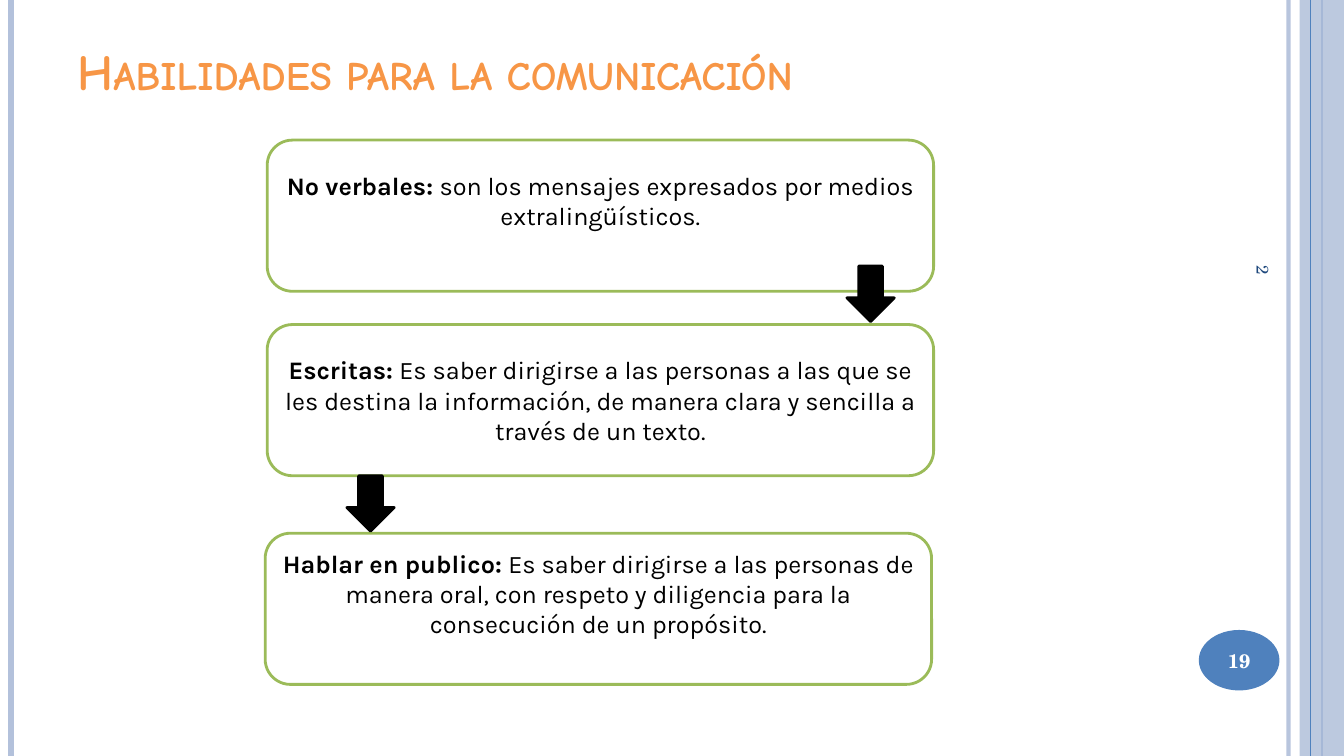
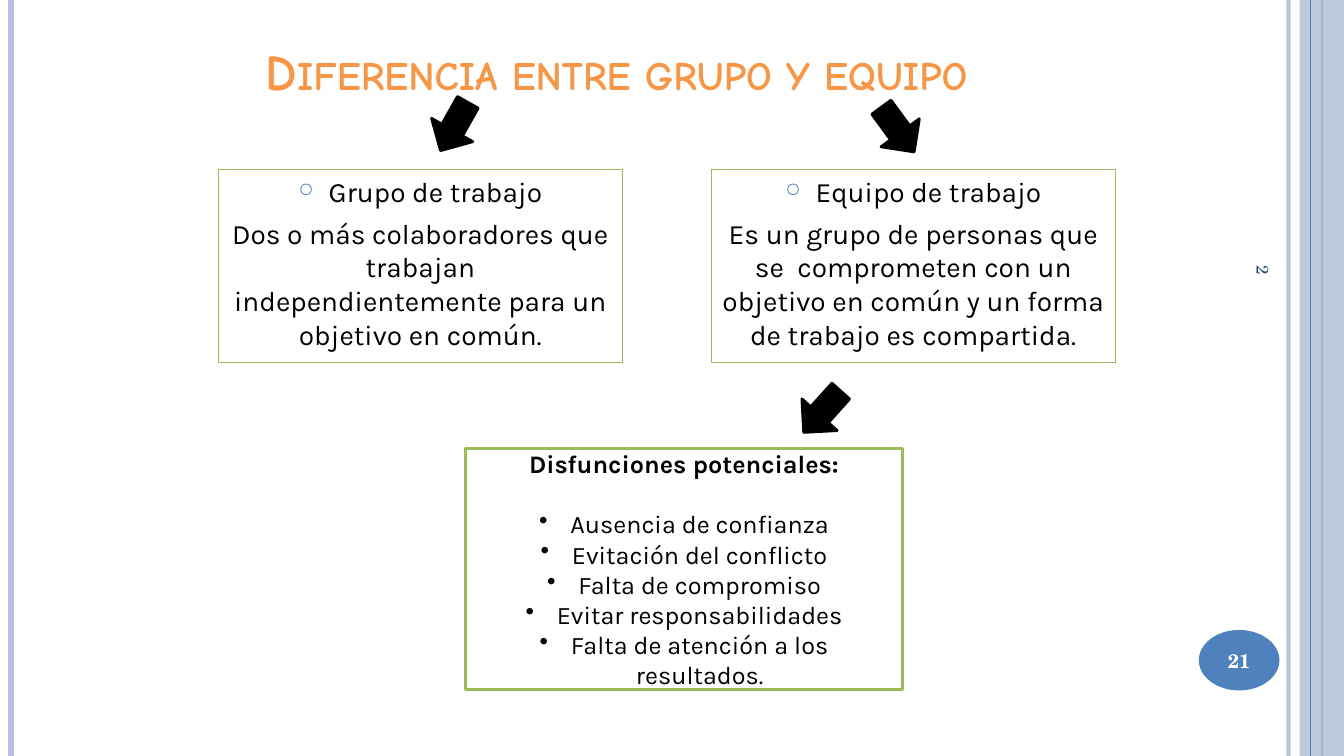
"""Builds two training slides on communication skills and on groups versus teams."""
from dataclasses import dataclass
from typing import Optional

from lxml.etree import SubElement
from pptx import Presentation
from pptx.dml.color import RGBColor
from pptx.enum.shapes import MSO_CONNECTOR, MSO_SHAPE
from pptx.enum.text import MSO_ANCHOR, PP_ALIGN
from pptx.oxml.ns import qn
from pptx.presentation import Presentation as Deck
from pptx.shapes.autoshape import Shape
from pptx.shapes.base import BaseShape
from pptx.slide import Slide
from pptx.text.text import TextFrame
from pptx.util import Inches, Pt

BLACK = RGBColor(0x00, 0x00, 0x00)
WHITE = RGBColor(0xFF, 0xFF, 0xFF)
BLUE = RGBColor(0x4F, 0x81, 0xBD)
PALE_BLUE = RGBColor(0xB3, 0xC1, 0xDB)
NAVY = RGBColor(0x1F, 0x49, 0x7D)
GREEN = RGBColor(0x9B, 0xBB, 0x59)
ORANGE = RGBColor(0xF7, 0x96, 0x46)

TITLE_FONT = "Comic Neue"
BODY_FONT = "Karla"
NUMBER_FONT = "TeX Gyre Schola"

SLIDE_WIDTH = 13.33
SLIDE_HEIGHT = 7.5
ARROW_WIDTH = 0.47
ARROW_HEIGHT = 0.55
TEXT_LINE = 0.3


@dataclass(frozen=True)
class Rule:
    x: float
    color: RGBColor
    width: float
    opacity: int = 100


@dataclass(frozen=True)
class Bullet:
    char: str
    indent: float
    color: Optional[RGBColor] = None
    percent: int = 100


@dataclass(frozen=True)
class Para:
    text: str
    lead: str = ""
    bullet: Optional[Bullet] = None
    before: float = 0
    after: float = 0


@dataclass(frozen=True)
class Panel:
    left: float
    top: float
    width: float
    height: float
    paras: tuple[Para, ...]
    kind: MSO_SHAPE = MSO_SHAPE.RECTANGLE
    size: float = 18
    border: float = 2
    anchor: MSO_ANCHOR = MSO_ANCHOR.MIDDLE
    bottom_inset: float = 0.05


@dataclass(frozen=True)
class Arrow:
    left: float
    top: float
    rotation: float = 0


@dataclass(frozen=True)
class Page:
    title: str
    title_align: PP_ALIGN
    number: str
    panels: tuple[Panel, ...]
    arrows: tuple[Arrow, ...]


RULES_BEHIND_BAND = (
    Rule(12.78, PALE_BLUE, 3, 93),
    Rule(0.11, PALE_BLUE, 4.5),
    Rule(13.11, BLUE, 1.5),
)
RULE_ON_BAND = Rule(13, BLUE, 0.75)
RING = Bullet("○", 0.3, BLUE, 70)
DOT = Bullet("•", 0.31)


def skill(left: float, top: float, lead: str, text: str, bottom_inset: float = 0.05) -> Panel:
    """Describe one rounded skill panel."""
    return Panel(left, top, 6.61, 1.5, (Para(text, lead),), MSO_SHAPE.ROUNDED_RECTANGLE,
                 bottom_inset=bottom_inset)


def definition(left: float, term: str, meaning: str) -> Panel:
    """Describe one thin-bordered panel that defines a term."""
    return Panel(left, 1.68, 4, 1.92, (Para(term, bullet=RING, before=6), Para(meaning, before=6)),
                 size=20, border=0.75, anchor=MSO_ANCHOR.TOP)


DYSFUNCTIONS = (
    "Ausencia de confianza",
    "Evitación del conflicto",
    "Falta de compromiso",
    "Evitar responsabilidades",
    "Falta de atención a los resultados.",
)

PAGES = (
    Page(
        "Habilidades para la comunicación", PP_ALIGN.LEFT, "19",
        (
            skill(2.65, 1.39, "No verbales: ",
                  "son los mensajes expresados por medios extralingüísticos.", 0.05 + TEXT_LINE),
            skill(2.65, 3.22, "Escritas: ",
                  "Es saber dirigirse a las personas a las que se les destina la información, "
                  "de manera clara y sencilla a través de un texto."),
            skill(2.63, 5.29, "Hablar en publico: ",
                  "Es saber dirigirse a las personas de manera oral, con respeto y diligencia "
                  "para la consecución de un propósito.", 0.05 + TEXT_LINE),
        ),
        (Arrow(8.4, 2.64), Arrow(3.44, 4.72)),
    ),
    Page(
        "Diferencia entre grupo y equipo", PP_ALIGN.CENTER, "21",
        (
            definition(2.17, "Grupo de trabajo",
                       "Dos o más colaboradores que trabajan independientemente para un "
                       "objetivo en común."),
            definition(7.06, "Equipo de trabajo",
                       "Es un grupo de personas que se  comprometen con un objetivo en común "
                       "y un forma de trabajo es compartida."),
            Panel(4.62, 4.45, 4.33, 2.39,
                  (Para("", "Disfunciones potenciales:", after=TEXT_LINE * 72),
                   *(Para(text, bullet=DOT) for text in DYSFUNCTIONS))),
        ),
        (Arrow(4.27, 0.98, 29.5), Arrow(8.67, 1.01, 323.8), Arrow(7.92, 3.81, 41.9)),
    ),
)


def set_opacity(shape: BaseShape, percent: int) -> None:
    """Make the first colour of a shape partly transparent."""
    color = next(shape._element.spPr.iter(qn("a:srgbClr")))
    SubElement(color, qn("a:alpha"), val=str(percent * 1000))


def add_rule(slide: Slide, rule: Rule) -> None:
    """Draw a vertical line over the full slide height."""
    line = slide.shapes.add_connector(MSO_CONNECTOR.STRAIGHT, Inches(rule.x), Inches(0),
                                      Inches(rule.x), Inches(SLIDE_HEIGHT))
    line.line.color.rgb = rule.color
    line.line.width = Pt(rule.width)
    if rule.opacity < 100:
        set_opacity(line, rule.opacity)
    SubElement(line._element.spPr, qn("a:effectLst"))


def add_box(slide: Slide, kind: MSO_SHAPE, left: float, top: float, width: float, height: float,
            fill: RGBColor, border: Optional[RGBColor] = None, border_width: float = 2) -> Shape:
    """Draw a flat preset shape with an optional border."""
    box = slide.shapes.add_shape(kind, Inches(left), Inches(top), Inches(width), Inches(height))
    box.shadow.inherit = False
    box.fill.solid()
    box.fill.fore_color.rgb = fill
    if border is None:
        box.line.fill.background()
    else:
        box.line.color.rgb = border
        box.line.width = Pt(border_width)
    return box


def write_line(frame: TextFrame, text: str, font: str, size: float, color: RGBColor,
               align: PP_ALIGN = PP_ALIGN.LEFT, bold: bool = False, small_caps: bool = False) -> None:
    """Write a single styled paragraph."""
    para = frame.paragraphs[0]
    para.alignment = align
    para.font.name = font
    para.font.size = Pt(size)
    para.font.bold = bold
    para.font.color.rgb = color
    span = para.add_run()
    span.text = text
    if small_caps:
        span._r.get_or_add_rPr().set("cap", "small")


def add_text(slide: Slide, left: float, top: float, width: float, height: float,
             anchor: MSO_ANCHOR) -> Shape:
    """Add an empty wrapping text box."""
    box = slide.shapes.add_textbox(Inches(left), Inches(top), Inches(width), Inches(height))
    box.text_frame.word_wrap = True
    box.text_frame.vertical_anchor = anchor
    return box


def add_frame(slide: Slide, page: Page) -> None:
    """Draw the side bands, title and numbers that all slides share."""
    for rule in RULES_BEHIND_BAND:
        add_rule(slide, rule)
    band = add_box(slide, MSO_SHAPE.RECTANGLE, 12.89, 0, 0.44, SLIDE_HEIGHT, PALE_BLUE)
    set_opacity(band, 87)
    add_rule(slide, RULE_ON_BAND)

    badge = add_box(slide, MSO_SHAPE.OVAL, 11.89, 6.25, 0.8, 0.6, BLUE)
    badge.text_frame.margin_left = badge.text_frame.margin_right = Inches(0)
    badge.text_frame.vertical_anchor = MSO_ANCHOR.MIDDLE
    write_line(badge.text_frame, page.number, NUMBER_FONT, 14, WHITE, PP_ALIGN.CENTER, bold=True)

    title = add_text(slide, 0.67, 0.3, 10.89, 0.75, MSO_ANCHOR.BOTTOM)
    write_line(title.text_frame, page.title, TITLE_FONT, 36, ORANGE, page.title_align,
               bold=True, small_caps=True)

    side_number = add_text(slide, 10.78, 4.02, 3.5, 0.53, MSO_ANCHOR.MIDDLE)
    side_number.rotation = 90
    write_line(side_number.text_frame, "2", NUMBER_FONT, 12, NAVY)


def add_panel(slide: Slide, panel: Panel) -> None:
    """Draw a bordered panel with its paragraphs."""
    box = add_box(slide, panel.kind, panel.left, panel.top, panel.width, panel.height,
                  WHITE, GREEN, panel.border)
    frame = box.text_frame
    frame.word_wrap = True
    frame.vertical_anchor = panel.anchor
    frame.margin_bottom = Inches(panel.bottom_inset)
    for index, content in enumerate(panel.paras):
        para = frame.add_paragraph() if index else frame.paragraphs[0]
        para.alignment = PP_ALIGN.CENTER
        if content.bullet:
            properties = para._p.get_or_add_pPr()
            indent = Inches(content.bullet.indent)
            properties.set("marL", str(indent))
            properties.set("indent", str(-indent))
            if content.bullet.color is not None:
                color = SubElement(properties, qn("a:buClr"))
                SubElement(color, qn("a:srgbClr"), val=str(content.bullet.color))
            SubElement(properties, qn("a:buSzPct"), val=str(content.bullet.percent * 1000))
            SubElement(properties, qn("a:buChar"), char=content.bullet.char)
        para.space_before = Pt(content.before)
        para.space_after = Pt(content.after)
        para.font.name = BODY_FONT
        para.font.size = Pt(panel.size)
        para.font.color.rgb = BLACK
        for text, bold in ((content.lead, True), (content.text, False)):
            if text:
                span = para.add_run()
                span.text = text
                span.font.bold = bold


def add_arrow(slide: Slide, arrow: Arrow) -> None:
    """Draw a black block arrow."""
    shape = add_box(slide, MSO_SHAPE.DOWN_ARROW, arrow.left, arrow.top, ARROW_WIDTH, ARROW_HEIGHT,
                    BLACK, BLACK)
    shape.rotation = arrow.rotation


def add_page(deck: Deck, page: Page) -> None:
    """Add one slide with its frame, panels and arrows."""
    slide = deck.slides.add_slide(deck.slide_layouts[6])
    add_frame(slide, page)
    for panel in page.panels:
        add_panel(slide, panel)
    for arrow in page.arrows:
        add_arrow(slide, arrow)


def main() -> None:
    """Build and save the deck."""
    deck = Presentation()
    deck.slide_width = Inches(SLIDE_WIDTH)
    deck.slide_height = Inches(SLIDE_HEIGHT)
    for page in PAGES:
        add_page(deck, page)
    deck.save("out.pptx")


if __name__ == "__main__":
    main()
